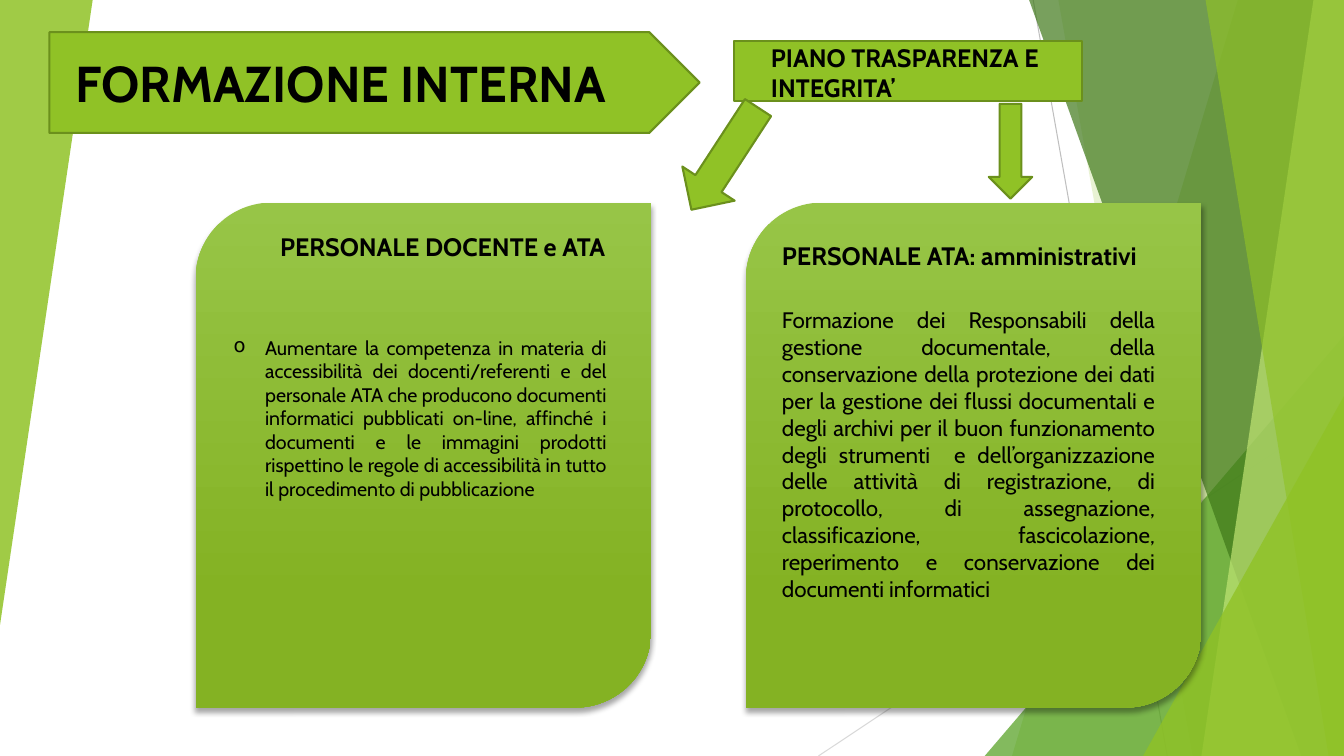
from dataclasses import dataclass

import pptx
import pptx.dml.color
import pptx.enum.shapes
import pptx.enum.text
import pptx.oxml
import pptx.oxml.ns
import pptx.util

Pt = pptx.util.Pt
RGBColor = pptx.dml.color.RGBColor
MSO_SHAPE = pptx.enum.shapes.MSO_SHAPE
PP_ALIGN = pptx.enum.text.PP_ALIGN
qn = pptx.oxml.ns.qn
NS = pptx.oxml.ns.nsdecls("a")

W, H = 960, 540
FONT = "Cabin"
BLACK = RGBColor(0x00, 0x00, 0x00)
GREEN = RGBColor(0x90, 0xC2, 0x26)
OUTLINE = RGBColor(0x6B, 0x90, 0x1C)
LEAF = RGBColor(0x54, 0xA0, 0x21)
FOREST = RGBColor(0x3F, 0x78, 0x19)
LIME = RGBColor(0xC0, 0xE4, 0x74)
CARD_TOP = RGBColor(0x97, 0xC5, 0x47)
CARD_BOTTOM = RGBColor(0x84, 0xB2, 0x23)
GREY = RGBColor(0xBF, 0xBF, 0xBF)
PALE_GREY = RGBColor(0xD9, 0xD9, 0xD9)


@dataclass(frozen=True)
class Box:
    x: float
    y: float
    w: float
    h: float

    def lengths(self) -> tuple:
        return Pt(self.x), Pt(self.y), Pt(self.w), Pt(self.h)


@dataclass(frozen=True)
class HairLine:
    x1: float
    y1: float
    x2: float
    y2: float
    color: RGBColor


@dataclass(frozen=True)
class Facet:
    """Full-height panel running from a slanted left edge to the slide's right edge."""
    top_x: float
    bottom_x: float
    color: RGBColor
    opacity: int


@dataclass(frozen=True)
class Wedge:
    box: Box
    color: RGBColor
    opacity: int
    rotation: float = 0


@dataclass(frozen=True)
class Block:
    kind: MSO_SHAPE
    box: Box
    rotation: float = 0


@dataclass(frozen=True)
class Label:
    text: str
    box: Box
    size: float
    bold: bool = True
    justified: bool = False
    bullet: str = ""


HAIRLINES = [HairLine(738, 0, 833.8, H, GREY), HairLine(W, 290.2, 584.6, H, PALE_GREY)]
BACKDROP = [
    Facet(884.2, 722.9, GREEN, 30),
    Facet(756, 851.8, GREEN, 20),
    Wedge(Box(703.4, 239.8, 256.6, 300.2), LEAF, 72),
    Facet(735.1, 929.5, FOREST, 70),
    Facet(938.2, 858.2, LIME, 70),
    Facet(861.1, 949, GREEN, 65),
    Wedge(Box(816.5, 283, 143.5, 257), GREEN, 80),
    Wedge(Box(0, 0, 66.2, 446.4), GREEN, 85, 180),
]
CARDS = [Box(x, 144.7, 325.4, 360.7) for x in (139.7, 532.8)]
BLOCKS = [
    Block(MSO_SHAPE.PENTAGON, Box(35.3, 23, 464.4, 72)),
    Block(MSO_SHAPE.RECTANGLE, Box(524.2, 29.5, 248.4, 42.5)),
    Block(MSO_SHAPE.DOWN_ARROW, Box(495.4, 69.8, 44.6, 87.1), 33.1),
    Block(MSO_SHAPE.DOWN_ARROW, Box(706.3, 74.2, 31, 67.7)),
]
LABELS = [
    Label("FORMAZIONE INTERNA", Box(46.8, 33.8, 433.4, 51.1), 36),
    Label("PIANO TRASPARENZA E INTEGRITA’", Box(543.6, 26.6, 248.4, 51.1), 18),
    Label("PERSONALE DOCENTE e ATA", Box(193, 162, 249.8, 51.1), 18),
    Label("PERSONALE ATA: amministrativi", Box(551.5, 167.8, 288, 28.8), 18),
    Label("Aumentare la competenza in materia di accessibilità dei docenti/referenti e del "
          "personale ATA che producono documenti informatici pubblicati on-line, affinché i "
          "documenti e le immagini prodotti rispettino le regole di accessibilità in tutto il "
          "procedimento di pubblicazione",
          Box(159.8, 236.2, 280.8, 184.3), 14, bold=False, justified=True, bullet="o"),
    Label("Formazione dei Responsabili della gestione documentale, della conservazione della "
          "protezione dei dati per la gestione dei flussi documentali e degli archivi per il "
          "buon funzionamento degli strumenti  e dell’organizzazione delle attività di "
          "registrazione, di protocollo, di assegnazione, classificazione, fascicolazione, "
          "reperimento e conservazione dei documenti informatici",
          Box(551.5, 215.3, 280.8, 285.8), 16, bold=False, justified=True),
]


def add_hairline(shapes, line: HairLine) -> None:
    cxn = shapes.add_connector(pptx.enum.shapes.MSO_CONNECTOR.STRAIGHT,
                               Pt(line.x1), Pt(line.y1), Pt(line.x2), Pt(line.y2))
    cxn.line.color.rgb = line.color
    cxn.line.width = Pt(0.75)
    cxn._element.spPr.append(pptx.oxml.parse_xml(f"<a:effectLst {NS}/>"))


def add_backdrop(shapes, part: Facet | Wedge) -> None:
    if isinstance(part, Facet):
        builder = shapes.build_freeform(Pt(part.top_x), 0)
        builder.add_line_segments(
            [(Pt(W), 0), (Pt(W), Pt(H)), (Pt(part.bottom_x), Pt(H))], close=True)
        sp = builder.convert_to_shape()
    else:
        sp = shapes.add_shape(MSO_SHAPE.ISOSCELES_TRIANGLE, *part.box.lengths())
        sp.adjustments[0] = 1
        sp.rotation = part.rotation
    sp.shadow.inherit = False
    sp.line.fill.background()
    sp.fill.solid()
    sp.fill.fore_color.rgb = part.color
    color = sp._element.spPr.find(qn("a:solidFill")).find(qn("a:srgbClr"))
    color.append(pptx.oxml.parse_xml(f'<a:alpha {NS} val="{part.opacity * 1000}"/>'))


def add_card(shapes, box: Box) -> None:
    sp = shapes.add_shape(MSO_SHAPE.ROUND_2_DIAG_RECTANGLE, *box.lengths())
    sp.line.fill.background()
    sp.fill.gradient()
    sp.fill.gradient_angle = 270
    for stop, position, color in zip(sp.fill.gradient_stops, (0, 0.78), (CARD_TOP, CARD_BOTTOM)):
        stop.position = position
        stop.color.rgb = color
    sp.shadow.inherit = False
    sp._element.spPr.find(qn("a:effectLst")).append(pptx.oxml.parse_xml(
        f'<a:outerShdw {NS} blurRad="{Pt(4)}" dist="{Pt(3)}" dir="5400000" rotWithShape="0">'
        '<a:srgbClr val="000000"><a:alpha val="35000"/></a:srgbClr></a:outerShdw>'))


def add_block(shapes, block: Block) -> None:
    sp = shapes.add_shape(block.kind, *block.box.lengths())
    sp.rotation = block.rotation
    sp.shadow.inherit = False
    sp.fill.solid()
    sp.fill.fore_color.rgb = GREEN
    sp.line.color.rgb = OUTLINE
    sp.line.width = Pt(1.5)


def add_label(shapes, label: Label) -> None:
    tf = shapes.add_textbox(*label.box.lengths()).text_frame
    tf.word_wrap = True
    tf.auto_size = pptx.enum.text.MSO_AUTO_SIZE.SHAPE_TO_FIT_TEXT
    tf.text = label.text
    p = tf.paragraphs[0]
    p.alignment = PP_ALIGN.JUSTIFY if label.justified else PP_ALIGN.LEFT
    if label.bullet:
        pPr = p._p.get_or_add_pPr()
        pPr.set("marL", str(Pt(22.5)))
        pPr.set("indent", str(-Pt(22.5)))
        pPr.append(pptx.oxml.parse_xml(f'<a:buChar {NS} char="{label.bullet}"/>'))
    r = p.runs[0]
    r.font.name = FONT
    r.font.size = Pt(label.size)
    r.font.bold = label.bold
    r.font.color.rgb = BLACK


def main() -> None:
    prs = pptx.Presentation()
    prs.slide_width, prs.slide_height = Pt(W), Pt(H)
    shapes = prs.slides.add_slide(prs.slide_layouts[6]).shapes
    for draw, items in ((add_hairline, HAIRLINES), (add_backdrop, BACKDROP), (add_card, CARDS),
                        (add_block, BLOCKS), (add_label, LABELS)):
        for item in items:
            draw(shapes, item)
    prs.save("out.pptx")


if __name__ == "__main__":
    main()
